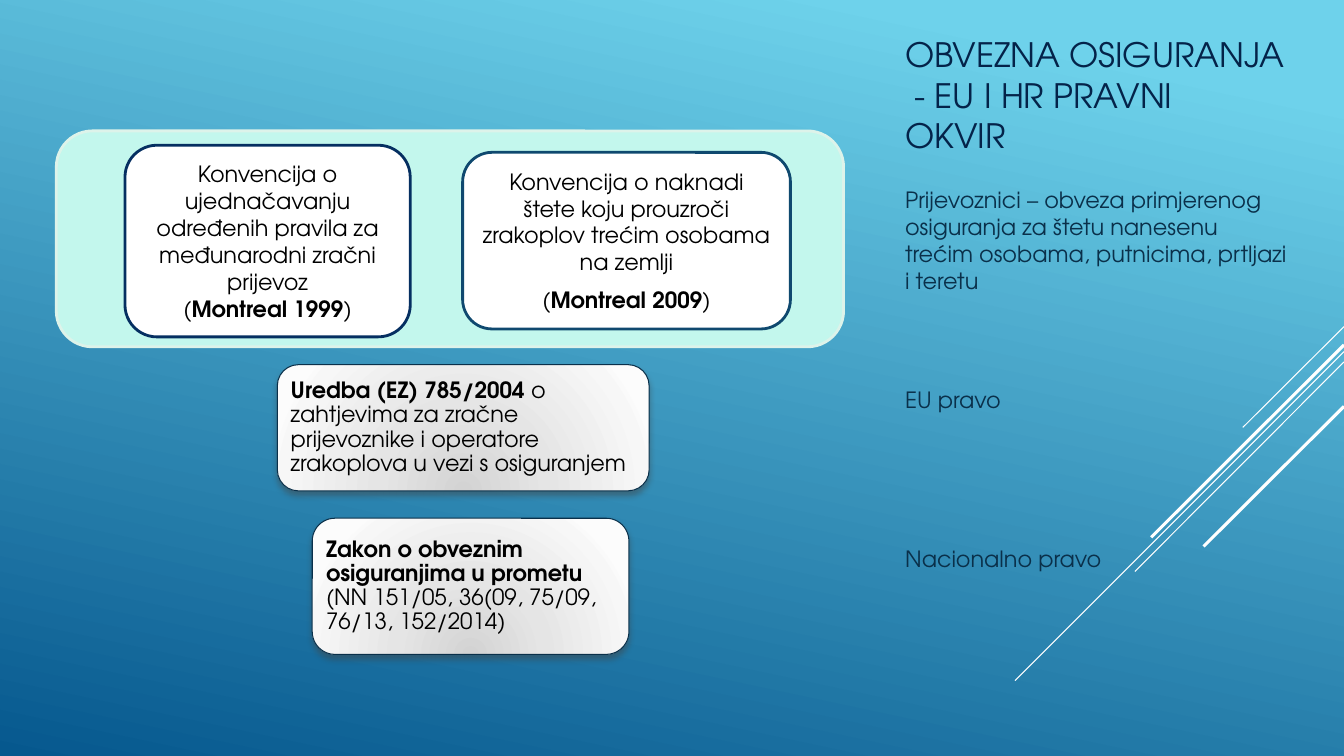
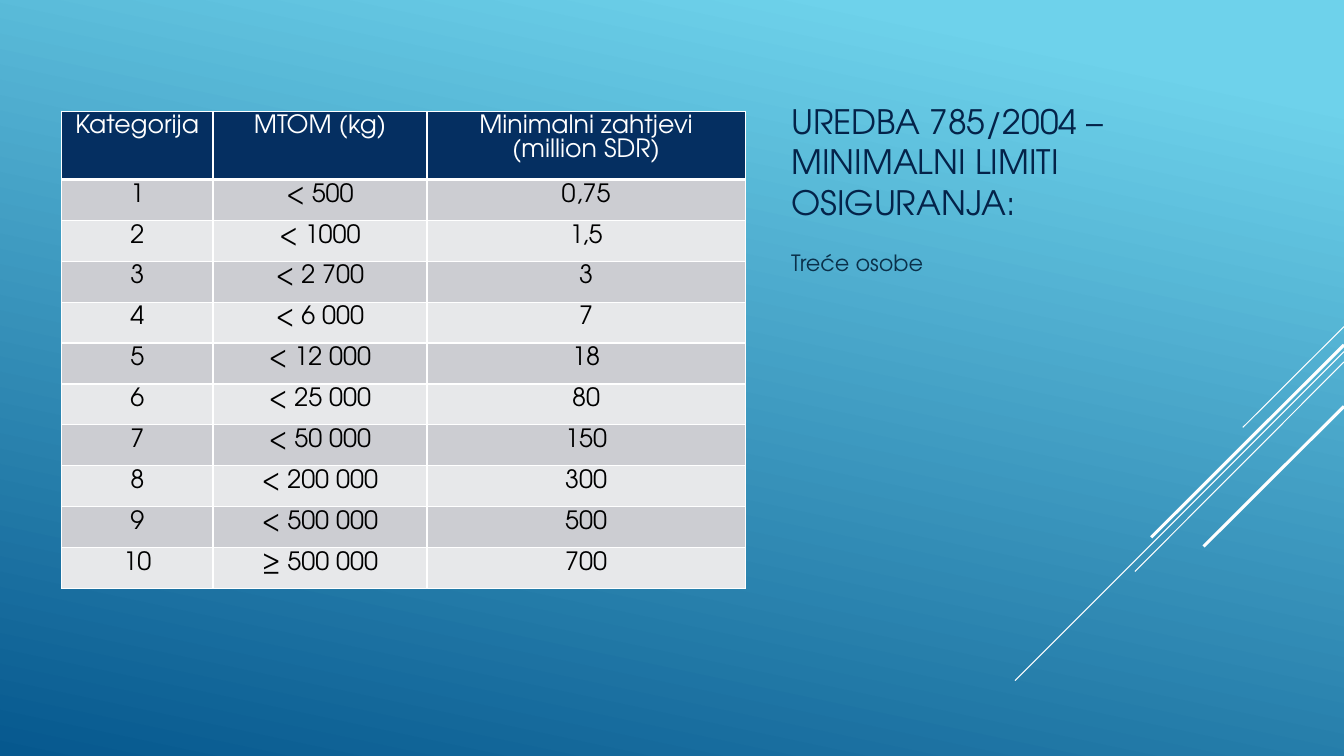
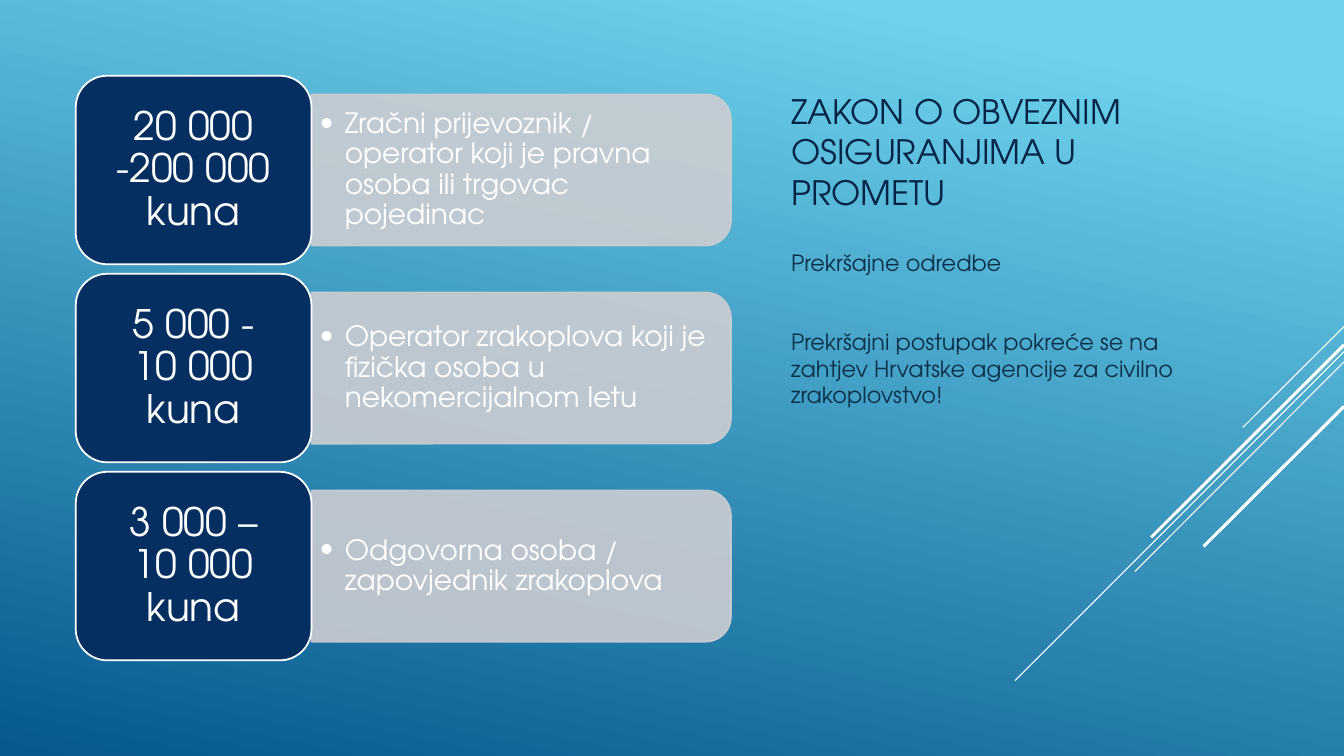
from pptx import Presentation
from pptx.dml.color import RGBColor
from pptx.enum.shapes import MSO_CONNECTOR, MSO_SHAPE
from pptx.enum.text import MSO_ANCHOR, PP_ALIGN
from pptx.oxml import parse_xml
from pptx.oxml.ns import nsdecls, qn
from pptx.util import Cm, Pt
from lxml.etree import SubElement

FONT = "TeX Gyre Adventor"
COLORS = {
    "sky": "6ED2EB", "deep": "06588E", "title": "042349", "body": "0A304A",
    "navy": "052F61", "steel": "0F496F", "mint": "C3F7ED", "mint_edge": "DDF3EA",
    "white": "FFFFFF", "black": "000000", "band_dark": "CCCDD2", "band_light": "E7E8EA",
    "shadow": "424242",
}
SILVER_STOPS = [(0, "D3D3D3"), (43, "E5E5E5"), (93, "F7F7F7"), (100, "FCFCFC")]
# start x, start y, end x, end y, width in points
RAYS = [
    (33.87, 8.23, 31.32, 10.77, 0.75),
    (33.87, 8.86, 25.58, 17.15, 0.75),
    (33.87, 9.12, 28.6, 14.4, 0.75),
    (33.87, 8.69, 29.01, 13.54, 2.25),
    (33.87, 10.24, 30.33, 13.77, 2.25),
]
LIMITS = [
    ("Kategorija", "MTOM (kg)", "Minimalni zahtjevi (million SDR)"),
    ("1", "< 500", "0,75"),
    ("2", "< 1000", "1,5"),
    ("3", "< 2 700", "3"),
    ("4", "< 6 000", "7"),
    ("5", "< 12 000", "18"),
    ("6", "< 25 000", "80"),
    ("7", "< 50 000", "150"),
    ("8", "< 200 000", "300"),
    ("9", "< 500 000", "500"),
    ("10", "≥ 500 000", "700"),
]
FINES = [
    ("20 000 -200 000 kuna",
     "Zračni prijevoznik / operator koji je pravna osoba ili trgovac pojedinac"),
    ("5 000 -\v10 000 kuna",
     "Operator zrakoplova koji je fizička osoba u nekomercijalnom letu"),
    ("3 000 –\v10 000 kuna", "Odgovorna osoba / zapovjednik zrakoplova"),
]


def rgb(name):
    return RGBColor.from_string(COLORS[name])


def write(frame, paragraphs, size, color, align=PP_ALIGN.LEFT, anchor=MSO_ANCHOR.MIDDLE,
          spacing=None, inset=(0.25, 0.13)):
    """Fill a text frame; words between asterisks are bold."""
    frame.word_wrap = True
    frame.vertical_anchor = anchor
    frame.margin_left = frame.margin_right = Cm(inset[0])
    frame.margin_top = frame.margin_bottom = Cm(inset[1])
    for index, text in enumerate(paragraphs):
        para = frame.add_paragraph() if index else frame.paragraphs[0]
        para.alignment = align
        if spacing:
            para.line_spacing = spacing
        pieces = text.split("*")
        if len(pieces) == 1:
            para.text = text
        else:
            for number, piece in enumerate(pieces):
                if piece:
                    span = para.add_run()
                    span.text = piece
                    span.font.bold = number % 2 == 1
        for span in para.runs:
            span.font.name = FONT
            span.font.size = Pt(size)
            span.font.color.rgb = rgb(color)


def add_text(page, box, paragraphs, size, color, **style):
    frame = page.shapes.add_textbox(*map(Cm, box)).text_frame
    write(frame, paragraphs, size, color, **style)
    return frame


def add_panel(page, box, fill, line, width, kind=MSO_SHAPE.ROUNDED_RECTANGLE):
    panel = page.shapes.add_shape(kind, *map(Cm, box))
    panel.shadow.inherit = False
    panel.fill.solid()
    panel.fill.fore_color.rgb = rgb(fill)
    panel.line.color.rgb = rgb(line)
    panel.line.width = Pt(width)
    return panel


def add_silver_card(page, box, text):
    card = add_panel(page, box, "white", "body", 0.75)
    properties = card._element.spPr
    stops = "".join(f'<a:gs pos="{pos * 1000}"><a:srgbClr val="{value}"/></a:gs>'
                    for pos, value in SILVER_STOPS)
    gradient = parse_xml(
        f'<a:gradFill {nsdecls("a")} rotWithShape="1"><a:gsLst>{stops}</a:gsLst>'
        '<a:path path="circle"><a:fillToRect l="50000" t="130000" r="50000" b="-30000"/>'
        '</a:path></a:gradFill>')
    properties.replace(properties.find(qn("a:solidFill")), gradient)
    properties.find(qn("a:effectLst")).append(parse_xml(
        f'<a:outerShdw {nsdecls("a")} blurRad="{Pt(4.5)}" dist="{Pt(3)}" dir="5400000" '
        f'rotWithShape="0"><a:srgbClr val="{COLORS["shadow"]}"><a:alpha val="48000"/>'
        '</a:srgbClr></a:outerShdw>'))
    write(card.text_frame, [text], 16, "black", spacing=0.9, inset=(0.18, 0.18))


def add_page(deck):
    page = deck.slides.add_slide(deck.slide_layouts[6])
    for left, top, right, bottom, width in RAYS:
        ray = page.shapes.add_connector(
            MSO_CONNECTOR.STRAIGHT, Cm(left), Cm(top), Cm(right), Cm(bottom))
        ray.line.color.rgb = rgb("white")
        ray.line.width = Pt(width)
        SubElement(ray._element.spPr, qn("a:effectLst"))
    return page


def add_side_text(page, left, top, title, body_top, body_height, body, gaps=(),
                  anchor=MSO_ANCHOR.MIDDLE):
    """Title and body column; gaps are the points above each later paragraph."""
    add_text(page, (left, top, 10.16, 3.81), [title], 24, "title", anchor=anchor)
    frame = add_text(page, (left, body_top, 10.16, body_height), body, 16, "body",
                     anchor=MSO_ANCHOR.TOP)
    for para in frame.paragraphs:
        para.space_after = Pt(6)
    for para, gap in zip(frame.paragraphs[1:], gaps):
        para.space_before = Pt(gap)


def add_conventions(page, left, top):
    add_panel(page, (left, top, 19.84, 5.44), "mint", "mint_edge", 2)
    first = add_panel(page, (left + 1.73, top + 0.36, 7.19, 4.83), "white", "navy", 2)
    write(first.text_frame,
          ["Konvencija o ujednačavanju određenih pravila za međunarodni zračni prijevoz",
           "(*Montreal 1999*)"], 16, "black", PP_ALIGN.CENTER)
    second = add_panel(page, (left + 10.24, top + 0.54, 8.26, 4.45), "white", "steel", 2)
    write(second.text_frame,
          ["Konvencija o naknadi štete koju prouzroči zrakoplov trećim osobama na zemlji",
           "(*Montreal 2009*)"], 16, "black", PP_ALIGN.CENTER)
    second.text_frame.paragraphs[1].space_before = Pt(8)


def add_limits_table(page, left, top):
    widths = (3.82, 5.39, 8.02)
    header_height, row_height = 1.43, 1.03
    table = page.shapes.add_table(
        len(LIMITS), len(widths), Cm(left), Cm(top), Cm(sum(widths)),
        Cm(header_height + row_height * (len(LIMITS) - 1))).table
    for column, width in zip(table.columns, widths):
        column.width = Cm(width)
    for index, values in enumerate(LIMITS):
        table.rows[index].height = Cm(row_height if index else header_height)
        fill = ("band_light", "band_dark")[index % 2] if index else "navy"
        for cell, value in zip(table.rows[index].cells, values):
            set_borders(cell, bottom=1 if index else 3, top=3 if index == 1 else 1)
            cell.fill.solid()
            cell.fill.fore_color.rgb = rgb(fill)
            write(cell.text_frame, [value], 18, "black" if index else "white",
                  PP_ALIGN.CENTER)
            cell.vertical_anchor = MSO_ANCHOR.TOP
            cell.margin_left = cell.margin_right = Cm(0.25)
            cell.margin_top = cell.margin_bottom = Cm(0.1)


def set_borders(cell, top, bottom):
    properties = cell._tc.get_or_add_tcPr()
    for side, width in (("L", 1), ("R", 1), ("T", top), ("B", bottom)):
        properties.append(parse_xml(
            f'<a:ln{side} {nsdecls("a")} w="{Pt(width)}"><a:solidFill>'
            f'<a:srgbClr val="{COLORS["white"]}"/></a:solidFill></a:ln{side}>'))


def add_fine(page, left, top, amount, offender):
    """Amount tile with the bar of the offender to its right."""
    tile_width, tile_height, bar_width, bar_height = 5.94, 4.75, 10.57, 3.81
    bar_left, bar_top = left + tile_width, top + (tile_height - bar_height) / 2
    turn = (bar_width - bar_height) / 2
    bar = add_panel(page, (bar_left + turn, bar_top - turn, bar_height, bar_width),
                    "band_dark", "band_dark", 1.25, MSO_SHAPE.ROUND_2_SAME_RECTANGLE)
    bar.rotation = 90
    for color in bar._element.spPr.iter(qn("a:srgbClr")):
        SubElement(color, qn("a:alpha"), val="90000")
    frame = add_text(page, (bar_left, bar_top + 0.19, 10.39, 3.43), [offender], 20, "white",
                     spacing=0.9, inset=(0.2, 0.1))
    properties = frame.paragraphs[0]._p.get_or_add_pPr()
    properties.set("marL", str(Cm(0.64)))
    properties.set("indent", str(Cm(-0.64)))
    SubElement(properties, qn("a:buFont"), typeface=FONT)
    SubElement(properties, qn("a:buChar"), char="•")
    tile = add_panel(page, (left, top, tile_width, tile_height), "navy", "white", 1.25)
    write(tile.text_frame, [amount], 28, "white", PP_ALIGN.CENTER, spacing=0.9,
          inset=(0.3, 0.15))


def build_framework(deck):
    page = add_page(deck)
    add_side_text(page, 22.56, 0.48, "OBVEZNA OSIGURANJA\v - EU I HR PRAVNI\vOKVIR", 4.57, 12.57,
                  ["Prijevoznici – obveza primjerenog osiguranja za štetu nanesenu "
                   "trećim osobama, putnicima, prtljazi i teretu",
                   "EU pravo", "Nacionalno pravo"], gaps=(60, 88))
    add_conventions(page, 1.42, 3.3)
    add_silver_card(page, (6.99, 9.19, 9.37, 3.18),
                    "*Uredba (EZ) 785/2004 *o zahtjevima za zračne prijevoznike i "
                    "operatore zrakoplova u vezi s osiguranjem")
    add_silver_card(page, (7.87, 13.06, 7.98, 3.43),
                    "*Zakon o obveznim osiguranjima u prometu *"
                    "(NN 151/05, 36(09, 75/09, 76/13, 152/2014)")


def build_limits(deck):
    page = add_page(deck)
    add_side_text(page, 19.69, 1.91, "UREDBA 785/2004 – MINIMALNI LIMITI OSIGURANJA:",
                  6.15, 5.82, ["Treće osobe"], anchor=MSO_ANCHOR.BOTTOM)
    add_limits_table(page, 1.55, 2.8)


def build_fines(deck):
    page = add_page(deck)
    add_side_text(page, 19.69, 1.91, "ZAKON O OBVEZNIM OSIGURANJIMA U PROMETU", 6.15, 5.82,
                  ["Prekršajne odredbe",
                   "Prekršajni postupak pokreće se na zahtjev Hrvatske agencije za civilno "
                   "zrakoplovstvo!"], gaps=(31,))
    for index, (amount, offender) in enumerate(FINES):
        add_fine(page, 1.91, 1.91 + 4.99 * index, amount, offender)


def set_background(deck):
    fill = deck.slide_master.background.fill
    fill.gradient()
    fill.gradient_angle = 258
    for stop, position, name in zip(fill.gradient_stops, (0.1, 1), ("sky", "deep")):
        stop.position = position
        stop.color.rgb = rgb(name)


def main():
    deck = Presentation()
    deck.slide_width, deck.slide_height = Cm(33.87), Cm(19.05)
    set_background(deck)
    build_framework(deck)
    build_limits(deck)
    build_fines(deck)
    deck.save("out.pptx")


if __name__ == "__main__":
    main()
